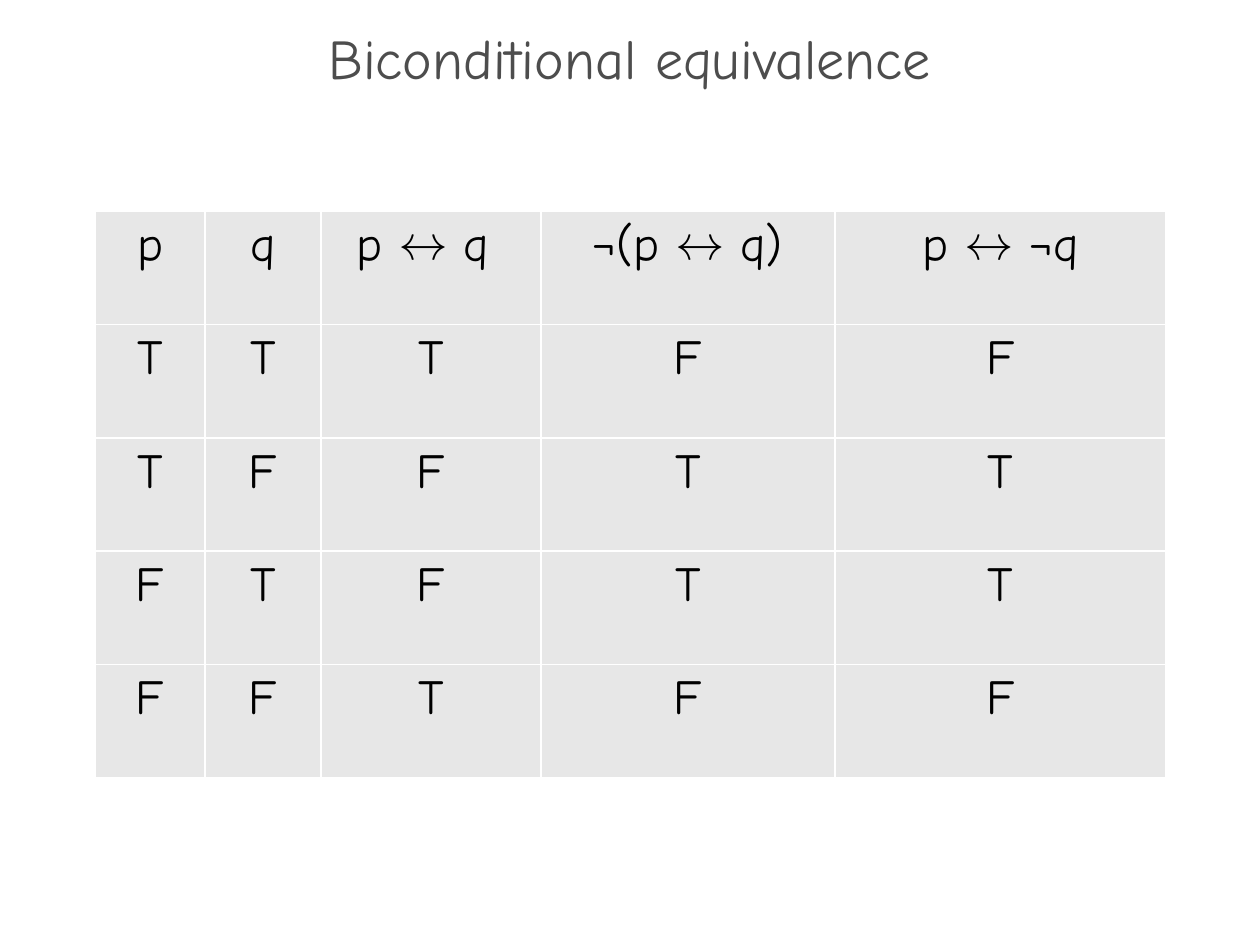
from dataclasses import dataclass
from itertools import product

from lxml.etree import SubElement
from pptx import Presentation
from pptx.dml.color import RGBColor
from pptx.enum.text import MSO_ANCHOR, PP_ALIGN
from pptx.oxml.ns import qn
from pptx.util import Emu, Pt

PX_PER_INCH = 126
FONT = "Comic Neue"
BORDER = "FFFFFF"
CELL_FILL = "E7E7E7"


@dataclass(frozen=True)
class Box:
    left: int
    top: int
    width: int
    height: int


@dataclass(frozen=True)
class TextStyle:
    size: int
    color: str


@dataclass(frozen=True)
class Column:
    header: str
    width: int
    values: str  # one truth value per row


TITLE_BOX = Box(0, 34, 1260, 63)
TITLE_STYLE = TextStyle(32, "4D4D4D")
TABLE_BOX = Box(95, 211, 1071, 567)
CELL_STYLE = TextStyle(28, "000000")
COLUMNS = [
    Column("p", 110, "TTFF"),
    Column("q", 116, "TFTF"),
    Column("p ↔ q ", 220, "TFFT"),
    Column("¬(p ↔ q)", 294, "FTTF"),
    Column("p ↔ ¬q", 331, "FTTF"),
]


def px(length: int) -> Emu:
    return Emu(round(length * 914400 / PX_PER_INCH))


def rgb(color: str) -> RGBColor:
    return RGBColor.from_string(color)


def format_paragraph(paragraph, style: TextStyle) -> None:
    paragraph.alignment = PP_ALIGN.CENTER
    paragraph.font.name = FONT
    paragraph.font.size = Pt(style.size)
    paragraph.font.bold = False
    paragraph.font.color.rgb = rgb(style.color)


def set_space_before(paragraph, percent: int) -> None:
    paragraph.space_before = Pt(0)
    spacing = paragraph._p.pPr.find(qn("a:spcBef"))
    spacing.remove(spacing[0])
    SubElement(spacing, qn("a:spcPct"), val=str(percent * 1000))


def add_borders(cell, color: str) -> None:
    properties = cell._tc.get_or_add_tcPr()
    for side in ("lnL", "lnR", "lnT", "lnB"):
        line = SubElement(properties, qn(f"a:{side}"), w=str(Pt(1)))
        fill = SubElement(line, qn("a:solidFill"))
        SubElement(fill, qn("a:srgbClr"), val=color)


def add_title(slide, text: str, box: Box) -> None:
    title = slide.shapes.title
    title.left, title.top = px(box.left), px(box.top)
    title.width, title.height = px(box.width), px(box.height)
    frame = title.text_frame
    frame.text = text
    frame.vertical_anchor = MSO_ANCHOR.MIDDLE
    paragraph = frame.paragraphs[0]
    paragraph.line_spacing = 0.7
    format_paragraph(paragraph, TITLE_STYLE)


def fill_cell(cell, text: str) -> None:
    add_borders(cell, BORDER)
    cell.fill.solid()
    cell.fill.fore_color.rgb = rgb(CELL_FILL)
    cell.text = text
    paragraph = cell.text_frame.paragraphs[0]
    format_paragraph(paragraph, CELL_STYLE)
    set_space_before(paragraph, 20)


def add_truth_table(slide, columns: list[Column], box: Box) -> None:
    row_count = len(columns[0].values) + 1
    table = slide.shapes.add_table(
        row_count, len(columns),
        px(box.left), px(box.top), px(box.width), px(box.height),
    ).table
    for table_column, column in zip(table.columns, columns):
        table_column.width = px(column.width)
    for row, index in product(range(row_count), range(len(columns))):
        column = columns[index]
        text = column.values[row - 1] if row else column.header
        fill_cell(table.cell(row, index), text)


def main() -> None:
    presentation = Presentation()
    presentation.slide_width, presentation.slide_height = px(1260), px(945)
    # Title Only layout
    slide = presentation.slides.add_slide(presentation.slide_layouts[5])
    add_title(slide, "Biconditional equivalence", TITLE_BOX)
    add_truth_table(slide, COLUMNS, TABLE_BOX)
    presentation.save("out.pptx")


if __name__ == "__main__":
    main()
